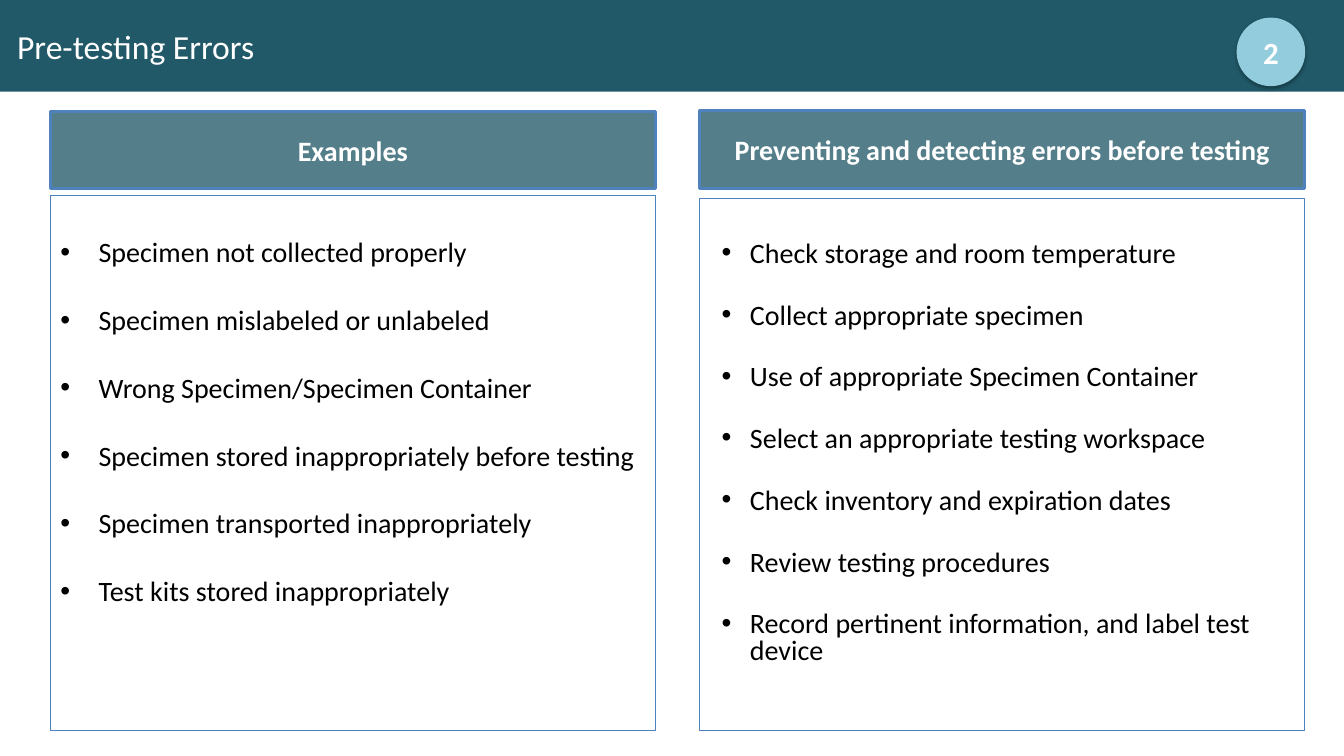
from lxml.etree import SubElement
from pptx import Presentation
from pptx.dml.color import RGBColor
from pptx.enum.shapes import MSO_SHAPE
from pptx.enum.text import MSO_ANCHOR, PP_ALIGN
from pptx.oxml.ns import qn
from pptx.util import Inches, Pt

TEAL = "215968"
BLUE = "4F81BD"
SKY = "93CDDD"
WHITE = "FFFFFF"
BLACK = "000000"

EXAMPLES = [
    "Specimen not collected properly",
    "Specimen mislabeled or unlabeled",
    "Wrong Specimen/Specimen Container",
    "Specimen stored inappropriately before testing",
    "Specimen transported inappropriately",
    "Test kits stored inappropriately",
]
PREVENTION = [
    "Check storage and room temperature",
    "Collect appropriate specimen",
    "Use of appropriate Specimen Container",
    "Select an appropriate testing workspace",
    "Check inventory and expiration dates",
    "Review testing procedures",
    "Record pertinent information, and label test device",
]


def color(value):
    return RGBColor.from_string(value)


def style_paragraph(paragraph, size, text_color, bold=False, alignment=PP_ALIGN.LEFT):
    paragraph.alignment = alignment
    for run in paragraph.runs:
        run.font.name = "Calibri"
        run.font.size = Pt(size)
        run.font.bold = bold
        run.font.color.rgb = color(text_color)


def add_outlined_shape(slide, kind, left, top, width, height, line_color, line_width):
    shape = slide.shapes.add_shape(
        kind, Inches(left), Inches(top), Inches(width), Inches(height)
    )
    shape.shadow.inherit = False
    shape.line.color.rgb = color(line_color)
    shape.line.width = Pt(line_width)
    shape.text_frame.word_wrap = True
    return shape


def fill_shape(shape, fill_color, opacity=100):
    shape.fill.solid()
    shape.fill.fore_color.rgb = color(fill_color)
    if opacity < 100:
        solid = shape.fill._xPr.find(qn("a:solidFill"))
        SubElement(solid[0], qn("a:alpha"), val=str(opacity * 1000))


def center_text(shape, text, size):
    text_frame = shape.text_frame
    text_frame.text = text
    text_frame.vertical_anchor = MSO_ANCHOR.MIDDLE
    style_paragraph(text_frame.paragraphs[0], size, WHITE, True, PP_ALIGN.CENTER)


def add_bullet(paragraph, margin, hanging):
    properties = paragraph._p.get_or_add_pPr()
    properties.set("marL", str(Inches(margin)))
    properties.set("indent", str(-Inches(hanging)))
    SubElement(properties, qn("a:buFont"), typeface="Arial")
    SubElement(properties, qn("a:buChar"), char="•")


def place_title(slide, text, left, top, width, height):
    title = slide.shapes.title
    title.left, title.top = Inches(left), Inches(top)
    title.width, title.height = Inches(width), Inches(height)
    fill_shape(title, TEAL)
    text_frame = title.text_frame
    text_frame.text = text
    text_frame.margin_left = Inches(0.17)
    text_frame.vertical_anchor = MSO_ANCHOR.MIDDLE
    style_paragraph(text_frame.paragraphs[0], 24, WHITE)


def add_header(slide, text, left, top, width, height):
    header = add_outlined_shape(
        slide, MSO_SHAPE.RECTANGLE, left, top, width, height, BLUE, 2
    )
    fill_shape(header, TEAL, 77)
    center_text(header, text, 20)


def add_bullet_panel(slide, items, left, top, width, height,
                     inset, margin, hanging, line_spacing, gap):
    panel = add_outlined_shape(
        slide, MSO_SHAPE.RECTANGLE, left, top, width, height, BLUE, 0.75
    )
    panel.fill.background()
    text_frame = panel.text_frame
    text_frame.text = "\n".join(items)
    text_frame.vertical_anchor = MSO_ANCHOR.TOP
    text_frame.margin_top = Inches(inset)
    for paragraph in text_frame.paragraphs:
        style_paragraph(paragraph, 20, BLACK)
        paragraph.line_spacing = line_spacing
        paragraph.space_after = Pt(gap)
        add_bullet(paragraph, margin, hanging)


def add_badge(slide, text, left, top, diameter):
    badge = add_outlined_shape(
        slide, MSO_SHAPE.OVAL, left, top, diameter, diameter, SKY, 0.75
    )
    fill_shape(badge, SKY)
    center_text(badge, text, 22)
    effects = badge._element.spPr.find(qn("a:effectLst"))
    shadow = SubElement(
        effects, qn("a:outerShdw"), blurRad=str(Pt(3.1)), dist=str(Pt(1.8)),
        dir="5400000", rotWithShape="0",
    )
    shadow_color = SubElement(shadow, qn("a:srgbClr"), val=BLACK)
    SubElement(shadow_color, qn("a:alpha"), val="35000")


def main():
    presentation = Presentation()
    presentation.slide_width = Inches(13.33)
    presentation.slide_height = Inches(7.5)
    slide = presentation.slides.add_slide(presentation.slide_layouts[5])
    place_title(slide, "Pre-testing Errors", 0, 0, 13.33, 0.91)
    add_bullet_panel(slide, EXAMPLES, 0.5, 1.94, 6, 5.31,
                     inset=0.44, margin=0.38, hanging=0.38, line_spacing=0.85, gap=28)
    add_bullet_panel(slide, PREVENTION, 6.94, 1.97, 6, 5.28,
                     inset=0.43, margin=0.4, hanging=0.28, line_spacing=0.8, gap=24.9)
    add_header(slide, "Examples", 0.5, 1.11, 6, 0.76)
    add_header(slide, "Preventing and detecting errors before testing",
               6.94, 1.1, 6, 0.77)
    add_badge(slide, "2", 12.27, 0.18, 0.67)
    presentation.save("out.pptx")


if __name__ == "__main__":
    main()
